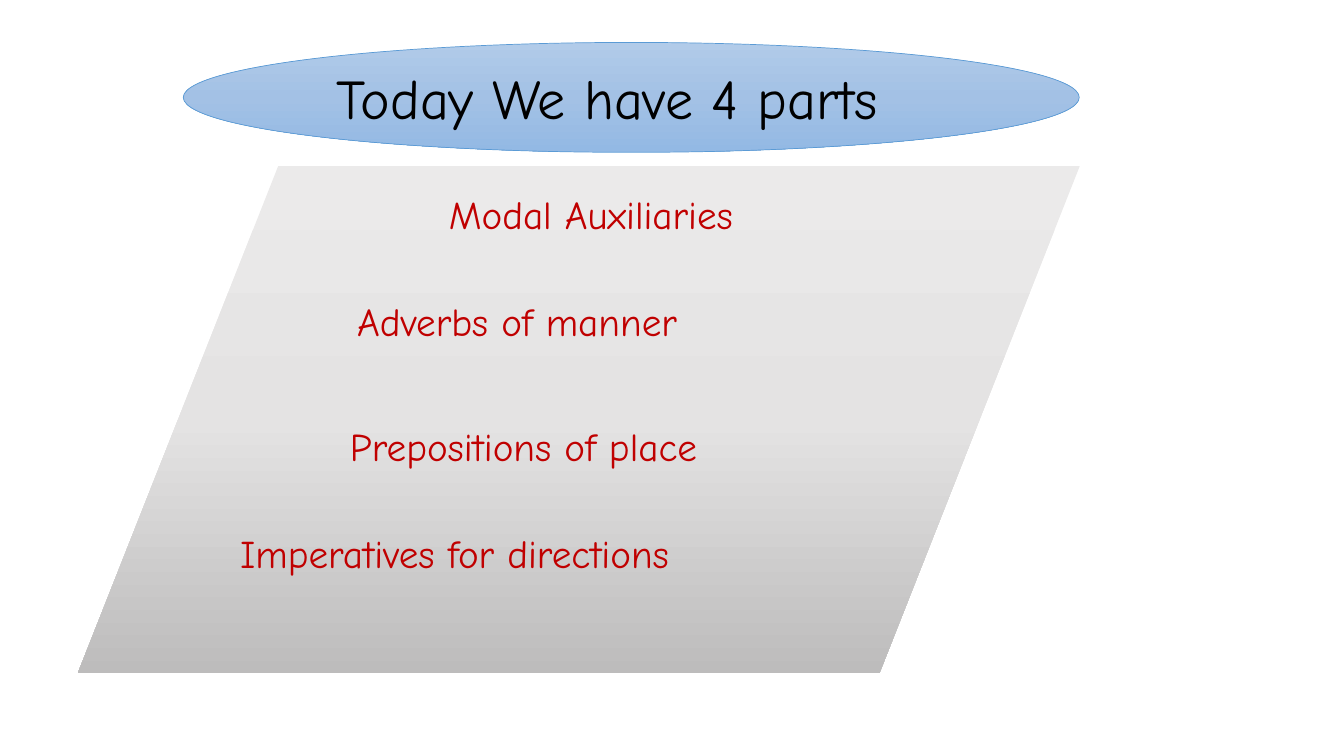
from dataclasses import dataclass

from lxml.etree import SubElement
from pptx import Presentation
from pptx.dml.color import RGBColor
from pptx.enum.shapes import MSO_SHAPE as Preset
from pptx.enum.text import MSO_ANCHOR as Anchor, MSO_AUTO_SIZE as AutoSize, PP_ALIGN as Align
from pptx.oxml.ns import qn
from pptx.shapes.autoshape import Shape
from pptx.slide import Slide
from pptx.text.text import Font, TextFrame
from pptx.util import Cm, Pt

FONT_NAME = "Comic Neue"
INSET = 0.13


@dataclass(frozen=True)
class Box:
    left: float
    top: float
    width: float
    height: float


@dataclass(frozen=True)
class Panel:
    preset: Preset
    box: Box
    gradient: tuple[str, str, str]
    outline: str | None = None


@dataclass(frozen=True)
class Part:
    text: str
    indent: float
    space_before: float


PANELS = [
    Panel(Preset.OVAL, Box(4.62, 1.07, 22.58, 2.77), ("B1CBE9", "A3C1E5", "93B9E4"), "5B9BD5"),
    Panel(Preset.FLOWCHART_DATA, Box(1.96, 4.19, 25.25, 12.78), ("EBEAEA", "E4E3E3", "BDBCBC")),
]
TITLE_BOX = Box(8.36, 1.07, 15, 2.77)
PARTS_BOX = Box(5.92, 4.67, 17.91, 9.83)
PARTS = [
    Part("Modal Auxiliaries", 5.26, 0),
    Part("Adverbs of manner", 2.95, 42.7),
    Part("Prepositions of place", 2.77, 55.6),
    Part("Imperatives for directions", 0, 42.7),
]


def color(value: str) -> RGBColor:
    return RGBColor.from_string(value)


def place(shape: Shape, box: Box) -> None:
    shape.left, shape.top = Cm(box.left), Cm(box.top)
    shape.width, shape.height = Cm(box.width), Cm(box.height)


def format_font(font: Font, size: float, value: str) -> None:
    font.name = FONT_NAME
    font.size = Pt(size)
    font.color.rgb = color(value)


def format_frame(text_frame: TextFrame, anchor: Anchor) -> None:
    text_frame.word_wrap = True
    text_frame.auto_size = AutoSize.NONE
    text_frame.vertical_anchor = anchor
    text_frame.margin_left = text_frame.margin_right = Cm(INSET)
    text_frame.margin_top = text_frame.margin_bottom = Cm(INSET)


def fill_gradient(shape: Shape, colors: tuple[str, str, str]) -> None:
    shape.fill.gradient()
    gradient = shape.element.spPr.find(qn("a:gradFill"))
    for child in list(gradient):
        gradient.remove(child)
    stops = SubElement(gradient, qn("a:gsLst"))
    for index, value in enumerate(colors):
        stop = SubElement(stops, qn("a:gs"), pos=str(index * 50000))
        SubElement(stop, qn("a:srgbClr"), val=value)
    SubElement(gradient, qn("a:lin"), ang="5400000", scaled="0")


def add_panel(slide: Slide, panel: Panel) -> None:
    shape = slide.shapes.add_shape(panel.preset, 0, 0, 0, 0)
    place(shape, panel.box)
    shape.shadow.inherit = False
    fill_gradient(shape, panel.gradient)
    if panel.outline:
        shape.line.color.rgb = color(panel.outline)
        shape.line.width = Pt(0.5)
    else:
        shape.line.fill.background()


def write_title(title: Shape, text: str) -> None:
    place(title, TITLE_BOX)
    text_frame = title.text_frame
    text_frame.text = text
    format_frame(text_frame, Anchor.MIDDLE)
    paragraph = text_frame.paragraphs[0]
    paragraph.alignment = Align.LEFT
    format_font(paragraph.runs[0].font, 40, "000000")


def write_parts(body: Shape, parts: list[Part]) -> None:
    place(body, PARTS_BOX)
    text_frame = body.text_frame
    text_frame.text = "\n".join(part.text for part in parts)
    format_frame(text_frame, Anchor.TOP)
    for paragraph, part in zip(text_frame.paragraphs, parts):
        paragraph.alignment = Align.LEFT
        paragraph.space_before = Pt(part.space_before)
        properties = paragraph._p.get_or_add_pPr()
        properties.set("marL", str(Cm(part.indent)))
        properties.set("indent", "0")
        SubElement(properties, qn("a:buNone"))
        format_font(paragraph.runs[0].font, 28, "C00000")


def main() -> None:
    presentation = Presentation()
    presentation.slide_width, presentation.slide_height = Cm(33.87), Cm(19.05)
    slide = presentation.slides.add_slide(presentation.slide_layouts[1])
    title, body = slide.placeholders
    for panel in PANELS:
        add_panel(slide, panel)
    for placeholder in (title, body):
        slide.shapes.element.append(placeholder.element)
    write_title(title, "Today We have 4 parts")
    write_parts(body, PARTS)
    presentation.save("out.pptx")


if __name__ == "__main__":
    main()
